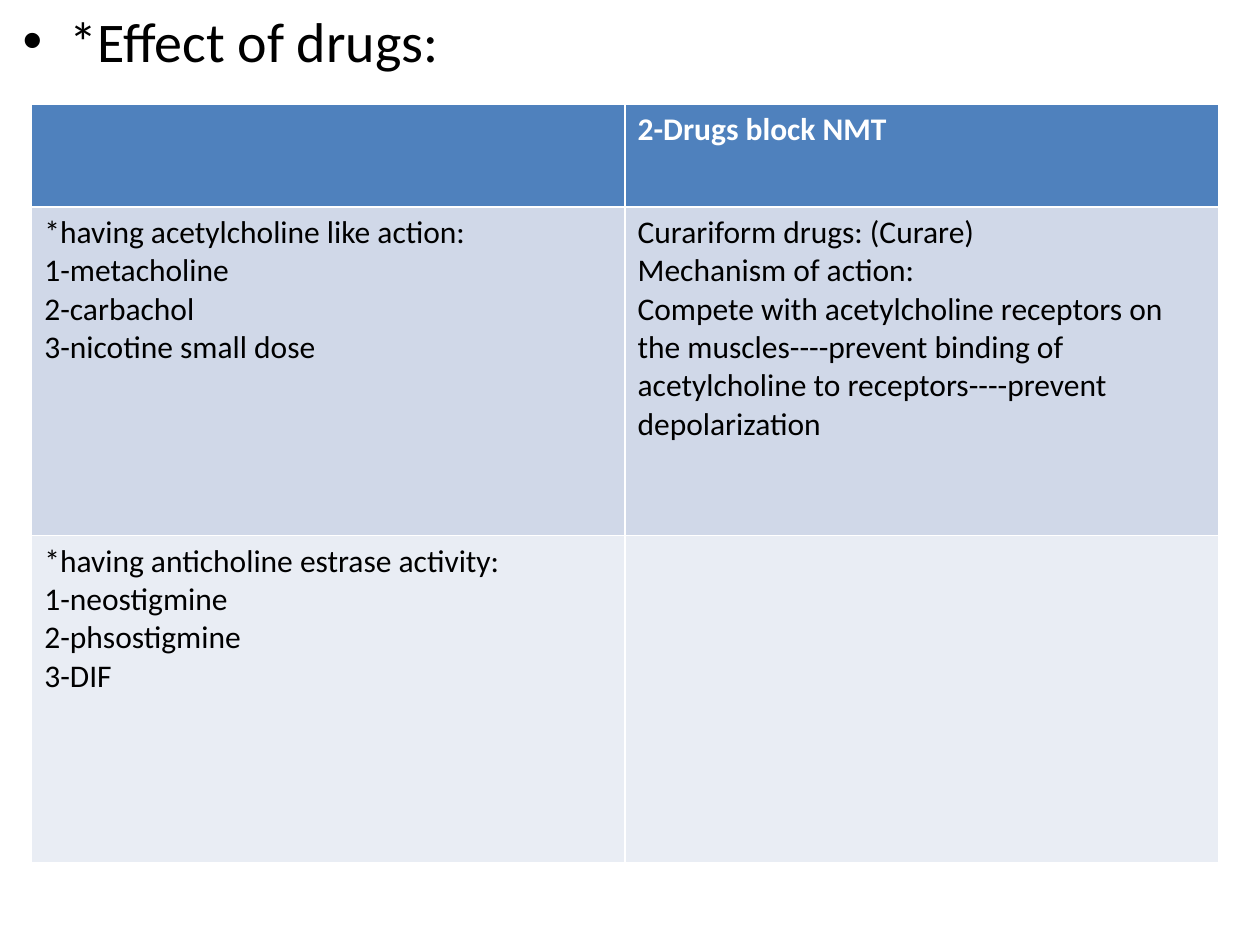
from dataclasses import dataclass

from pptx import Presentation
from pptx.dml.color import RGBColor
from pptx.table import _Cell
from pptx.util import Cm, Length, Pt

BLACK = RGBColor(0x00, 0x00, 0x00)
WHITE = RGBColor(0xFF, 0xFF, 0xFF)
HEADER_BLUE = RGBColor(0x4F, 0x81, 0xBD)
BAND_DARK = RGBColor(0xD0, 0xD8, 0xE8)
BAND_LIGHT = RGBColor(0xE9, 0xED, 0xF4)

COLUMN_WIDTH = Cm(11.96)
HEADING_FRAME = {"left": Cm(0.2), "top": Cm(0), "width": Cm(24.77), "height": Cm(18.62)}


@dataclass(frozen=True)
class DrugRow:
    height: Length
    fill: RGBColor
    color: RGBColor
    bold: bool
    stimulants: str
    blockers: str


DRUG_ROWS = [
    DrugRow(Cm(2.06), HEADER_BLUE, WHITE, True, "", "2-Drugs block NMT"),
    DrugRow(
        Cm(6.63), BAND_DARK, BLACK, False,
        "*having acetylcholine like action:\n1-metacholine\n2-carbachol\n3-nicotine small dose",
        "Curariform drugs: (Curare)\nMechanism of action:\n"
        "Compete with acetylcholine receptors on the muscles----prevent binding of "
        "acetylcholine to receptors----prevent depolarization",
    ),
    DrugRow(
        Cm(6.6), BAND_LIGHT, BLACK, False,
        "*having anticholine estrase activity:\n1-neostigmine\n2-phsostigmine\n3-DIF",
        "",
    ),
]


def set_format(target: object, values: dict) -> None:
    for name, value in values.items():
        setattr(target, name, value)


def fill_cell(cell: _Cell, content: str, row: DrugRow) -> None:
    cell.fill.solid()
    cell.fill.fore_color.rgb = row.fill
    if not content:
        return
    cell.text = content
    for paragraph in cell.text_frame.paragraphs:
        for run in paragraph.runs:
            set_format(run.font, {"name": "Calibri", "size": Pt(18), "bold": row.bold})
            run.font.color.rgb = row.color


def add_heading(slide) -> None:
    heading = slide.placeholders[1]
    set_format(heading, HEADING_FRAME)
    heading.text_frame.text = "*Effect of drugs:"
    font = heading.text_frame.paragraphs[0].runs[0].font
    set_format(font, {"name": "Calibri", "size": Pt(32)})
    font.color.rgb = BLACK


def add_drug_table(slide) -> None:
    total_height = sum(row.height for row in DRUG_ROWS)
    drugs = slide.shapes.add_table(
        len(DRUG_ROWS), 2, Cm(0.64), Cm(2.11), 2 * COLUMN_WIDTH, total_height
    ).table
    for column in drugs.columns:
        column.width = COLUMN_WIDTH
    for index, row in enumerate(DRUG_ROWS):
        drugs.rows[index].height = row.height
        for cell, content in zip(drugs.rows[index].cells, (row.stimulants, row.blockers)):
            fill_cell(cell, content, row)


def main() -> None:
    deck = Presentation()
    set_format(deck, {"slide_width": Cm(25.4), "slide_height": Cm(19.05)})
    slide = deck.slides.add_slide(deck.slide_layouts[1])
    unused_title = slide.shapes.title.element
    unused_title.getparent().remove(unused_title)
    add_heading(slide)
    add_drug_table(slide)
    deck.save("out.pptx")


if __name__ == "__main__":
    main()
